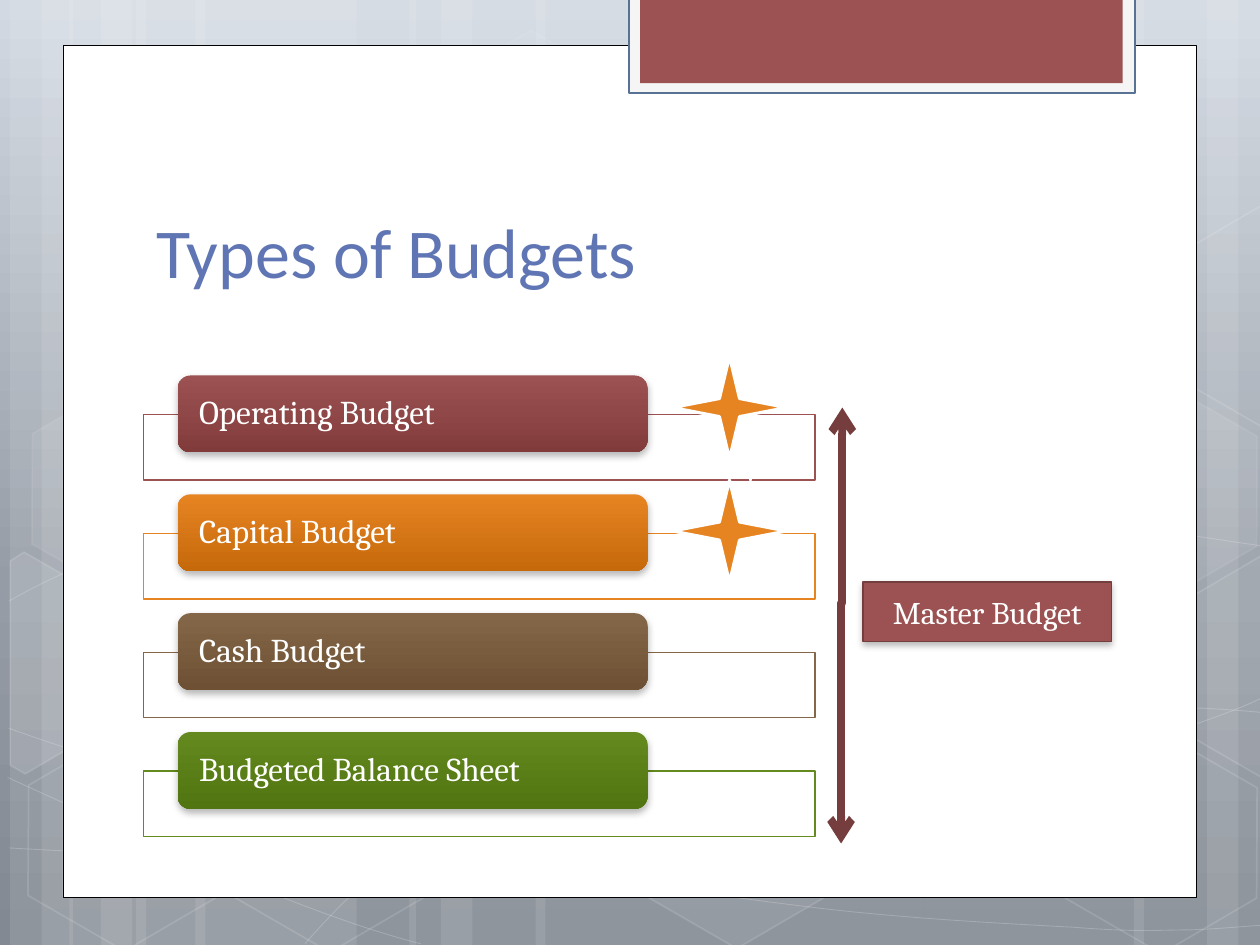
import math
from copy import deepcopy
from dataclasses import dataclass
from typing import NamedTuple, Optional

from lxml import etree
from pptx import Presentation, util as u
from pptx.dml import color
from pptx.enum import shapes, text
from pptx.oxml import ns

PRESET = shapes.MSO_SHAPE
WHITE, BLACK, BRICK, ORANGE = "FFFFFF", "000000", "9C5252", "E68422"
TILT = 30
ROW_PITCH = 2.83 / 3


class Box(NamedTuple):
    left: float
    top: float
    width: float
    height: float


class Paint(NamedTuple):
    hex: str
    alpha: int = 100


class Stroke(NamedTuple):
    hex: str
    width: float
    alpha: int = 100


@dataclass
class Budget:
    name: str
    light: str
    dark: str


@dataclass
class Hexagon:
    left: float
    top: float
    fill_alpha: int
    line_alpha: int


@dataclass
class Fragment:
    center: tuple
    corners: list
    fill_alpha: int


STRIPES = [(1.08, 1.75), (0.08, 0.5), (0.33, 0.83), (1.55, 1.75), (0.55, 0.5), (0.8, 0.83),
           (7.33, 1.75), (9.58, 0.5), (9, 0.83), (4.25, 3.08), (3.25, 0.5), (3.5, 0.83)]
WAVES = [
    [(0.07, 6.73), (0.61, 6.76), (1.15, 6.79), (1.9, 6.78), (2.65, 6.77), (3.58, 6.75),
     (4.58, 6.65), (5.58, 6.55), (7, 6.36), (7.92, 6.17), (8.83, 5.98), (9.77, 5.68), (10.07, 5.51)],
    [(0.07, 4.77), (0.36, 4.61), (0.65, 4.46), (1.21, 4.31), (1.78, 4.16), (2.59, 3.94),
     (3.47, 3.87), (4.36, 3.8), (5.44, 3.79), (6.54, 3.87), (7.64, 3.95), (9.47, 4.26), (10.07, 4.34)],
    [(0.06, 6.17), (1.27, 6.72), (2.47, 7.27), (3.34, 7.49)],
    [(0.07, 5.78), (0.38, 5.89), (0.7, 6), (1.28, 6.16), (1.86, 6.31), (2.73, 6.56), (3.57, 6.73),
     (4.4, 6.9), (5.45, 7.08), (6.28, 7.18), (7.11, 7.29), (8, 7.33), (8.53, 7.36),
     (9.05, 7.4), (9.19, 7.38), (9.45, 7.38), (9.71, 7.37), (9.89, 7.35), (10.07, 7.34)],
    [(2.42, 7.49), (2.6, 7.29), (2.78, 7.09), (3.02, 6.91), (3.26, 6.73), (3.6, 6.53), (3.88, 6.39),
     (4.16, 6.25), (4.33, 6.19), (4.7, 6.09), (5.06, 5.99), (5.73, 5.85), (6.08, 5.78),
     (6.44, 5.71), (6.49, 5.71), (6.8, 5.69), (7.11, 5.66), (7.6, 5.63), (7.94, 5.62),
     (8.29, 5.61), (8.86, 5.62), (9.53, 5.62), (9.71, 5.63), (9.88, 5.64), (10.06, 5.66)],
]
HEXAGONS = [Hexagon(3.34, 0.36, 4, 8), Hexagon(4.97, 5.89, 6, 12), Hexagon(0.11, 5.91, 0, 12),
            Hexagon(0.14, 3.12, 7, 8), Hexagon(1.74, 5.92, 0, 12), Hexagon(7.53, 4.53, 10, 12),
            Hexagon(8.34, 5.93, 0, 12), Hexagon(8.34, 3.14, 7, 8)]
FRAGMENTS = [
    Fragment((0.36, 5.35), [(0.08, 4.45), (0.19, 4.38), (0.96, 4.82), (0.95, 5.7), (0.2, 6.14), (0.08, 6.07)], 10),
    Fragment((9.85, 5.2), [(9.26, 4.85), (10.01, 4.41), (10.09, 4.46), (10.09, 6.13), (10.02, 6.17), (9.26, 5.73)], 4),
    Fragment((9.85, 2.41), [(9.26, 2.07), (10.01, 1.63), (10.1, 1.68), (10.09, 3.35), (10.02, 3.39), (9.26, 2.95)], 0),
]
BUDGETS = [Budget("Operating Budget", BRICK, "823B3B"), Budget("Capital Budget", ORANGE, "C6690B"),
           Budget("Cash Budget", "846648", "6E5134"), Budget("Budgeted Balance Sheet", "63891F", "517510")]


def rgb(value: str) -> color.RGBColor:
    return color.RGBColor.from_string(value)


def child(parent, tag: str, **values):
    return etree.SubElement(parent, ns.qn(tag), {key: str(value) for key, value in values.items()})


def set_solid(fill, holder, value: str, alpha: int) -> None:
    fill.solid()
    fill.fore_color.rgb = rgb(value)
    if alpha < 100:
        child(holder.find(ns.qn("a:solidFill"))[0], "a:alpha", val=alpha * 1000)


def set_gradient(fill, holder, stops: list) -> None:
    fill.gradient()
    fill.gradient_angle = 270
    stop_list = next(holder.iter(ns.qn("a:gsLst")))
    while len(stop_list) < len(stops):
        stop_list.append(deepcopy(stop_list[0]))
    for stop, (position, value) in zip(fill.gradient_stops, stops):
        stop.color.rgb = rgb(value)
        stop.position = position


def style(shape, paint: Optional[Paint] = None, stroke: Optional[Stroke] = None):
    shape.shadow.inherit = False
    properties = shape._element.spPr
    if paint and paint.alpha:
        set_solid(shape.fill, properties, *paint)
    else:
        shape.fill.background()
    if stroke:
        shape.line.width = u.Pt(stroke.width)
        set_solid(shape.line.fill, properties.find(ns.qn("a:ln")), stroke.hex, stroke.alpha)
    else:
        shape.line.fill.background()
    return shape


def add_preset(slide, kind, box: Box, paint: Optional[Paint] = None, stroke: Optional[Stroke] = None):
    return style(slide.shapes.add_shape(kind, *map(u.Inches, box)), paint, stroke)


def add_outline(slide, points: list, close: bool, paint: Optional[Paint], stroke: Stroke):
    start, *rest = [(u.Inches(x), u.Inches(y)) for x, y in points]
    builder = slide.shapes.build_freeform(*start)
    builder.add_line_segments(rest, close=close)
    return style(builder.convert_to_shape(), paint, stroke)


def draw_wave(slide, knots: list) -> None:
    wave = add_outline(slide, knots, False, None, Stroke(WHITE, 0.5, 20))
    outline = next(wave._element.iter(ns.qn("a:moveTo"))).getparent()
    segments = outline.findall(ns.qn("a:lnTo"))
    for first in range(0, len(segments), 3):
        curve = child(outline, "a:cubicBezTo")
        for segment in segments[first:first + 3]:
            curve.append(segment[0])
            outline.remove(segment)


def draw_fragment(slide, fragment: Fragment) -> None:
    cosine, sine = math.cos(math.radians(TILT)), math.sin(math.radians(TILT))
    middle_x, middle_y = fragment.center
    offsets = [(x - middle_x, y - middle_y) for x, y in fragment.corners]
    upright = [(middle_x + x * cosine + y * sine, middle_y - x * sine + y * cosine) for x, y in offsets]
    add_outline(slide, upright, True, Paint(WHITE, fragment.fill_alpha), Stroke(WHITE, 1, 12)).rotation = TILT


def cast_shadow(shape) -> None:
    effects = shape._element.spPr.find(ns.qn("a:effectLst"))
    shadow = child(effects, "a:outerShdw", blurRad=u.Pt(4), dist=u.Pt(2), dir=5400000, rotWithShape=0)
    child(child(shadow, "a:srgbClr", val=BLACK), "a:alpha", val=28000)


def write(shape, words: str, size: int, font: str, value: str, align, anchor, **margins) -> None:
    frame = shape.text_frame
    for name, setting in {"word_wrap": True, "vertical_anchor": anchor, **margins}.items():
        setattr(frame, name, setting)
    paragraph = frame.paragraphs[0]
    paragraph.alignment = align
    run = paragraph.add_run()
    run.text = words
    for name, setting in {"size": u.Pt(size), "name": font}.items():
        setattr(run.font, name, setting)
    run.font.color.rgb = rgb(value)


def draw_backdrop(slide) -> None:
    set_gradient(slide.background.fill, slide.element, [(0, "D2D9E2"), (0.62, "959CA5"), (1, "828992")])
    for left, width in STRIPES:
        add_preset(slide, PRESET.RECTANGLE, Box(left, 0, width, 7.5), Paint(WHITE, 10))
    for wave in WAVES:
        draw_wave(slide, wave)
    for cell in HEXAGONS:
        hexagon = add_preset(slide, PRESET.HEXAGON, Box(cell.left, cell.top, 1.75, 1.52),
                             Paint(WHITE, cell.fill_alpha), Stroke(WHITE, 1, cell.line_alpha))
        hexagon.rotation = TILT
        hexagon.adjustments[0] = 0.285
    for fragment in FRAGMENTS:
        draw_fragment(slide, fragment)
    add_preset(slide, PRESET.RECTANGLE, Box(0.5, 0.36, 9, 6.76), Paint(WHITE), Stroke(BLACK, 0.5))
    add_preset(slide, PRESET.RECTANGLE, Box(4.99, -0.02, 4.02, 0.76), Paint("F5F5F5"), Stroke("577293", 1.25))
    add_preset(slide, PRESET.RECTANGLE, Box(5.08, -0.02, 3.83, 0.68), Paint(BRICK))


def draw_budget(slide, budget: Budget, offset: float) -> None:
    add_preset(slide, PRESET.RECTANGLE, Box(1.14, 3.29 + offset, 5.33, 0.52),
               Paint(WHITE, 90), Stroke(budget.light, 0.75))
    card = add_preset(slide, PRESET.ROUNDED_RECTANGLE, Box(1.41, 2.98 + offset, 3.73, 0.61))
    set_gradient(card.fill, card._element.spPr, [(0, budget.light), (1, budget.dark)])
    cast_shadow(card)
    label = slide.shapes.add_textbox(*map(u.Inches, Box(1.44, 3.01 + offset, 3.67, 0.55)))
    write(label, budget.name, 19, "Cambria", WHITE, text.PP_ALIGN.LEFT, text.MSO_ANCHOR.MIDDLE,
          margin_left=u.Inches(0.14), margin_right=u.Inches(0.14), margin_top=0, margin_bottom=0)
    label.text_frame.paragraphs[0].line_spacing = 0.9


def draw_span_arrow(slide) -> None:
    ends = map(u.Inches, (4.95, 4.96, 8.41, 4.97))
    arrow = slide.shapes.add_connector(shapes.MSO_CONNECTOR.ELBOW, *ends)
    arrow.line.width = u.Pt(4.5)
    arrow.line.color.rgb = rgb("753D3D")
    properties = arrow._element.spPr
    properties.find(ns.qn("a:xfrm")).set("rot", "5400000")
    child(next(properties.iter(ns.qn("a:avLst"))), "a:gd", name="adj1", fmla="val 44800")
    for tip in ("a:headEnd", "a:tailEnd"):
        child(properties.find(ns.qn("a:ln")), tip, type="arrow")
    child(properties, "a:effectLst")


def main() -> None:
    deck = Presentation()
    deck.slide_width, deck.slide_height = u.Inches(10), u.Inches(7.5)
    slide = deck.slides.add_slide(deck.slide_layouts[6])
    draw_backdrop(slide)
    title = slide.shapes.add_textbox(*map(u.Inches, Box(1.14, 1.12, 7.68, 1.25)))
    write(title, "Types of Budgets", 40, "Calibri", "6076B4", text.PP_ALIGN.LEFT, text.MSO_ANCHOR.BOTTOM)
    for row, budget in enumerate(BUDGETS):
        draw_budget(slide, budget, row * ROW_PITCH)
    draw_span_arrow(slide)
    master = add_preset(slide, PRESET.RECTANGLE, Box(6.85, 4.62, 1.97, 0.47), Paint(BRICK), Stroke("753E3E", 0.75))
    cast_shadow(master)
    write(master, "Master Budget", 18, "Cambria", WHITE, text.PP_ALIGN.CENTER, text.MSO_ANCHOR.MIDDLE)
    for left, top, waist in ((5.34, 3.81, 0.125), (5.51, 3, 0), (5.34, 2.83, 0.125)):
        star = add_preset(slide, PRESET.STAR_4_POINT, Box(left, top, 0.9, 0.81), Paint(ORANGE), Stroke(WHITE, 1.75))
        star.adjustments[0] = waist
    deck.save("out.pptx")


if __name__ == "__main__":
    main()
